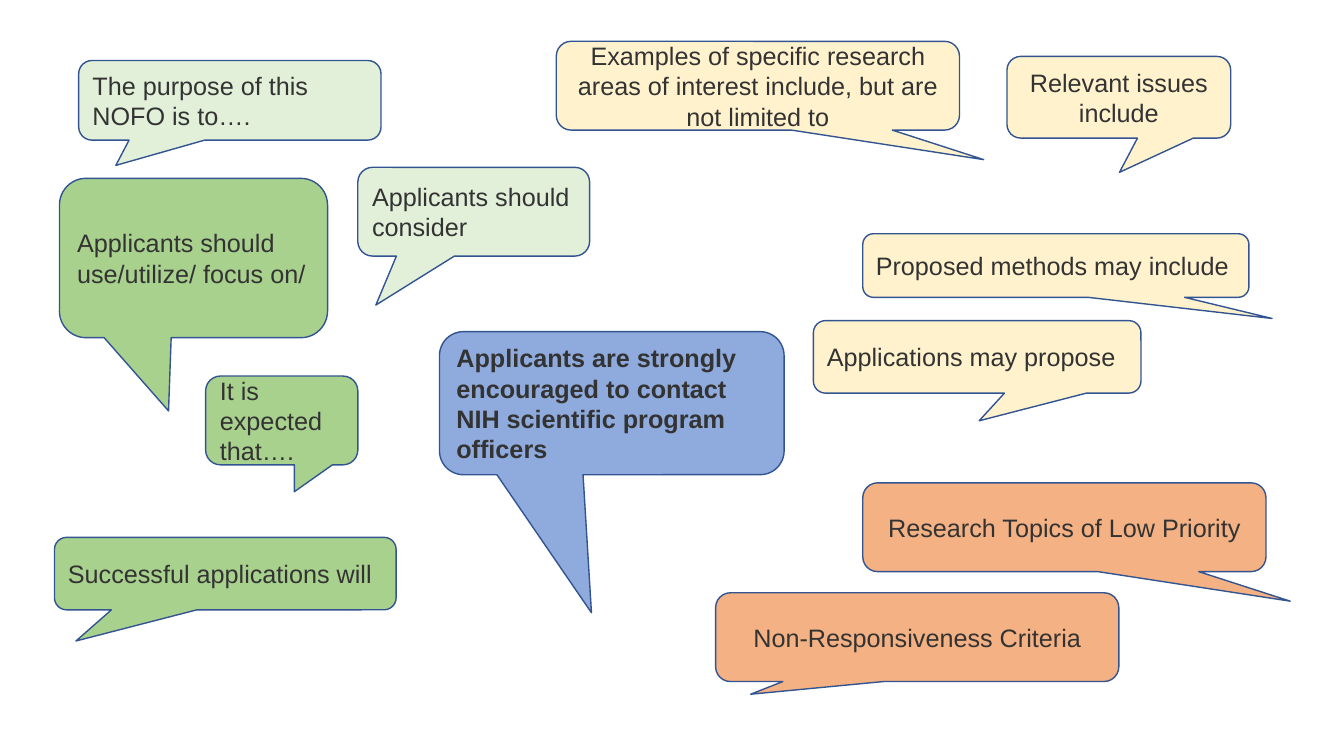
from pptx import Presentation
from pptx.dml.color import RGBColor
from pptx.enum.shapes import MSO_SHAPE
from pptx.enum.text import MSO_ANCHOR, PP_ALIGN
from pptx.util import Pt

CALLOUT = MSO_SHAPE.ROUNDED_RECTANGULAR_CALLOUT
MIDDLE = MSO_ANCHOR.MIDDLE
LEFT, CENTER = PP_ALIGN.LEFT, PP_ALIGN.CENTER

COLORS = {
    "purpose": "E2F0D9",
    "expected": "A9D18E",
    "optional": "FFF2CC",
    "excluded": "F4B183",
    "contact": "8FAADC",
    "outline": "325491",
    "text": "333333",
}
CORNER = 0.167
LOWER_RIGHT = (0.56, 0.833)

CALLOUTS = [
    ("purpose", (56.2, 43.2, 216, 56.9), (-0.377, 0.817), LEFT,
     "The purpose of this NOFO is to…."),
    ("optional", (397.4, 29.5, 288, 63.4), LOWER_RIGHT, CENTER,
     "Examples of specific research areas of interest include, but are not limited to"),
    ("expected", (38.9, 383.8, 244.1, 51.8), (-0.437, 0.93), LEFT,
     "Successful applications will"),
    ("optional", (719.3, 40.3, 159.8, 58.3), (0.003, 0.92), CENTER,
     "Relevant issues include"),
    ("optional", (616.3, 167, 275.8, 45.4), LOWER_RIGHT, LEFT,
     "Proposed methods may include"),
    ("optional", (581, 229, 234, 51.8), (0.006, 0.882), LEFT,
     "Applications may propose"),
    ("expected", (42.5, 127.4, 191.5, 113.8), (-0.093, 0.96), LEFT,
     "Applicants should use/utilize/ focus on/"),
    ("excluded", (616.3, 344.9, 288, 63.4), LOWER_RIGHT, CENTER,
     "Research Topics of Low Priority"),
    ("expected", (146.9, 268.6, 108.7, 63.4), (0.083, 0.803), LEFT,
     "It is expected that…."),
    ("purpose", (255.6, 119.5, 165.6, 63.4), (-0.422, 1.052), LEFT,
     "Applicants should consider"),
    ("excluded", (511.2, 423.4, 288, 63.4), (-0.413, 0.643), CENTER,
     "Non-Responsiveness Criteria"),
    ("contact", (313.9, 236.9, 246.2, 102.2), (-0.059, 1.465), LEFT,
     "Applicants are strongly encouraged to contact NIH scientific program officers"),
]


def color(name):
    return RGBColor.from_string(COLORS[name])


def add_callout(page, kind, box, tip, alignment, text):
    callout = page.shapes.add_shape(CALLOUT, *map(Pt, box))
    callout.shadow.inherit = False
    for index, value in enumerate((*tip, CORNER)):
        callout.adjustments[index] = value
    callout.fill.solid()
    callout.fill.fore_color.rgb = color(kind)
    callout.line.color.rgb = color("outline")
    callout.line.width = Pt(1)

    frame = callout.text_frame
    frame.word_wrap = True
    frame.vertical_anchor = MIDDLE
    para = frame.paragraphs[0]
    para.alignment = alignment
    span = para.add_run()
    span.text = text
    font_format = {"name": "Arial", "size": Pt(18), "bold": kind == "contact"}
    for attribute, value in font_format.items():
        setattr(span.font, attribute, value)
    span.font.color.rgb = color("text")


def build_callout_page(deck):
    page = deck.slides.add_slide(deck.slide_layouts[6])
    for callout in CALLOUTS:
        add_callout(page, *callout)


def main():
    deck = Presentation()
    deck.slide_width, deck.slide_height = Pt(960), Pt(540)
    build_callout_page(deck)
    deck.save("out.pptx")


if __name__ == "__main__":
    main()
